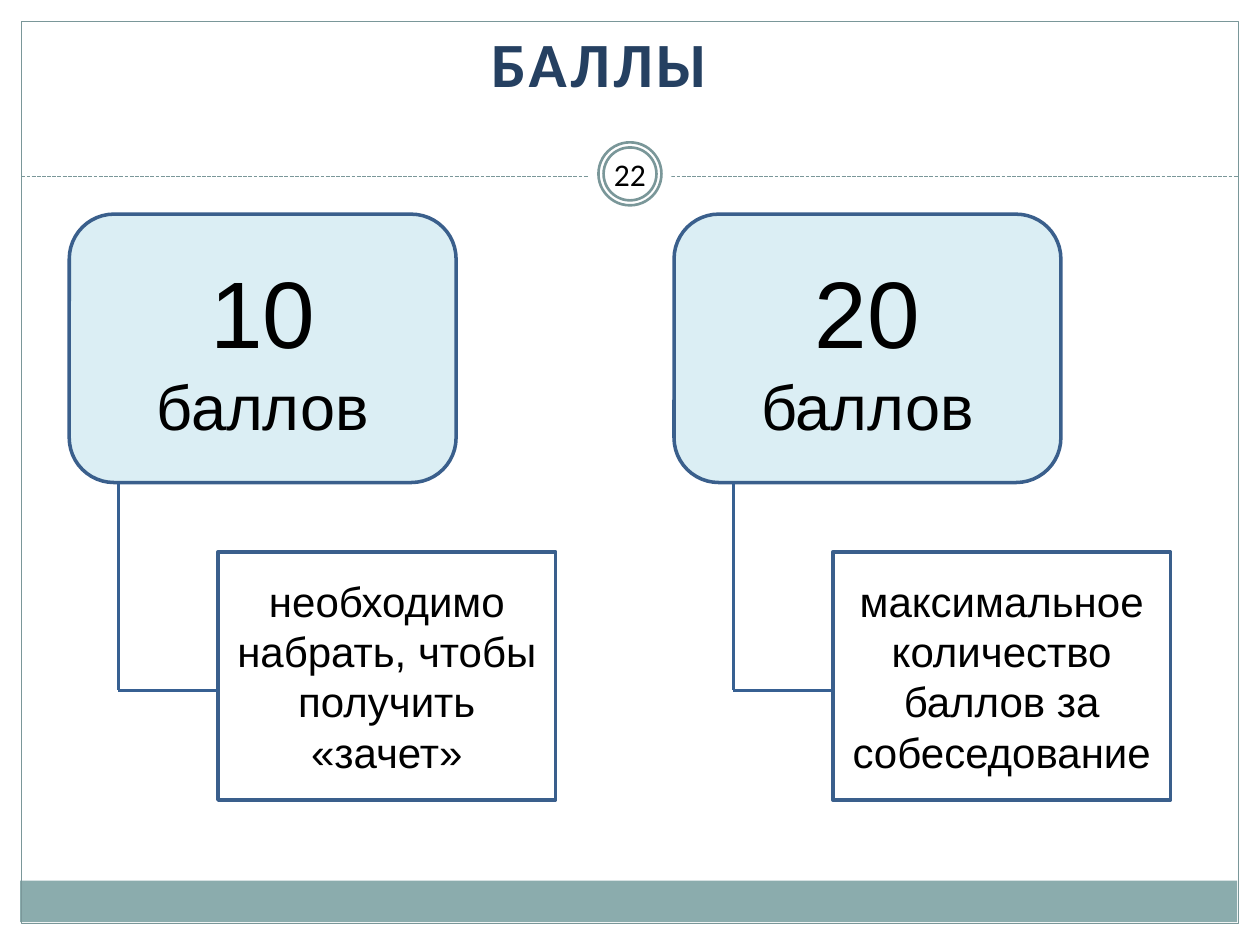
from lxml.etree import SubElement
from pptx import Presentation
from pptx.dml.color import RGBColor
from pptx.enum.dml import MSO_LINE
from pptx.enum.shapes import MSO_CONNECTOR, MSO_SHAPE
from pptx.enum.text import MSO_ANCHOR, MSO_AUTO_SIZE, PP_ALIGN
from pptx.oxml.ns import qn
from pptx.util import Inches, Pt

FRAME = "7A9799"
BAND = "8BACAD"
OUTLINE = "3A5F8C"
STEM = "376092"
CARD = "DBEEF4"
NAVY = "254061"
WHITE = "FFFFFF"
BLACK = "000000"

CENTER = 5
SCORE_TOP, SCORE_WIDTH, SCORE_HEIGHT = 1.7, 3.07, 2.13
NOTE_TOP, NOTE_WIDTH, NOTE_HEIGHT = 4.38, 2.68, 1.97
STEM_INDENT = 0.79
STEM_BOTTOM = 5.48

# score, left of its card, note, left of the note
SCORES = [
    ("10", 0.55, "необходимо набрать, чтобы получить «зачет»", 1.73),
    ("20", 5.35, "максимальное количество баллов за собеседование", 6.61),
]


def rgb(color):
    return RGBColor.from_string(color)


def add_box(slide, kind, left, top, width, height, fill=None, line=None, weight=2):
    box = slide.shapes.add_shape(
        kind, Inches(left), Inches(top), Inches(width), Inches(height))
    box.shadow.inherit = False
    if fill:
        box.fill.solid()
        box.fill.fore_color.rgb = rgb(fill)
    else:
        box.fill.background()
    if line:
        box.line.color.rgb = rgb(line)
        box.line.width = Pt(weight)
    else:
        box.line.fill.background()
    return box


def add_circle(slide, radius, middle, fill=None, line=None, weight=1.5):
    return add_box(slide, MSO_SHAPE.OVAL, CENTER - radius, middle - radius,
                   2 * radius, 2 * radius, fill, line, weight)


def add_line(slide, start, end, color, weight):
    line = slide.shapes.add_connector(
        MSO_CONNECTOR.STRAIGHT, *[Inches(value) for value in (*start, *end)])
    line.line.color.rgb = rgb(color)
    line.line.width = Pt(weight)
    SubElement(line._element.spPr, qn("a:effectLst"))
    return line


def write(shape, lines, font="Arial", color=BLACK, anchor=MSO_ANCHOR.MIDDLE):
    """Fill a shape with centred (text, size) paragraphs."""
    frame = shape.text_frame
    frame.word_wrap = True
    frame.auto_size = MSO_AUTO_SIZE.NONE
    frame.vertical_anchor = anchor
    frame.text = "\n".join(text for text, _ in lines)
    for paragraph, (_, size) in zip(frame.paragraphs, lines):
        paragraph.alignment = PP_ALIGN.CENTER
        paragraph.font.name = font
        paragraph.font.size = Pt(size)
        paragraph.font.color.rgb = rgb(color)
    return frame


def add_frame(slide):
    add_box(slide, MSO_SHAPE.RECTANGLE, 0.16, 6.99, 9.66, 0.33, BAND)
    add_box(slide, MSO_SHAPE.RECTANGLE, 0.17, 0.17, 9.66, 7.16,
            line=FRAME, weight=0.75)
    divider = add_line(slide, (0.17, 1.4), (9.83, 1.4), FRAME, 0.75)
    divider.line.dash_style = MSO_LINE.SQUARE_DOT


def add_number_badge(slide, number):
    middle = 1.38
    add_circle(slide, 0.33, middle, fill=WHITE)
    for radius in (0.25, 0.21):
        add_circle(slide, radius, middle, line=FRAME)
    label = slide.shapes.add_textbox(
        Inches(4.75), Inches(1.17), Inches(0.5), Inches(0.42))
    write(label, [(number, 18)], "Calibri")


def add_title(slide, text):
    title = slide.shapes.title
    title.left, title.top = Inches(0.03), Inches(0.21)
    title.width, title.height = Inches(9.45), Inches(1.18)
    frame = write(title, [(text, 36)], "Calibri", NAVY, MSO_ANCHOR.TOP)
    paragraph = frame.paragraphs[0]
    paragraph.font.bold = True
    paragraph.line_spacing = 0.9
    paragraph.runs[0].font._element.set("spc", "200")


def add_score(slide, score, score_left, note, note_left):
    card = add_box(slide, MSO_SHAPE.ROUNDED_RECTANGLE, score_left, SCORE_TOP,
                   SCORE_WIDTH, SCORE_HEIGHT, CARD, OUTLINE)
    write(card, [(score, 54), ("баллов", 36)])

    note_box = add_box(slide, MSO_SHAPE.RECTANGLE, note_left, NOTE_TOP,
                       NOTE_WIDTH, NOTE_HEIGHT, line=OUTLINE)
    write(note_box, [(note, 24)])

    # Stem from the card down and across to the note
    corner = (note_left - STEM_INDENT, STEM_BOTTOM)
    add_line(slide, (corner[0], SCORE_TOP + SCORE_HEIGHT), corner, STEM, 2)
    add_line(slide, corner, (note_left, STEM_BOTTOM), STEM, 2)


def main():
    prs = Presentation()
    prs.slide_width, prs.slide_height = Inches(10), Inches(7.5)
    slide = prs.slides.add_slide(prs.slide_layouts[5])

    add_frame(slide)
    add_number_badge(slide, "22")
    add_title(slide, "БАЛЛЫ")
    for score in SCORES:
        add_score(slide, *score)

    prs.save("out.pptx")


if __name__ == "__main__":
    main()
